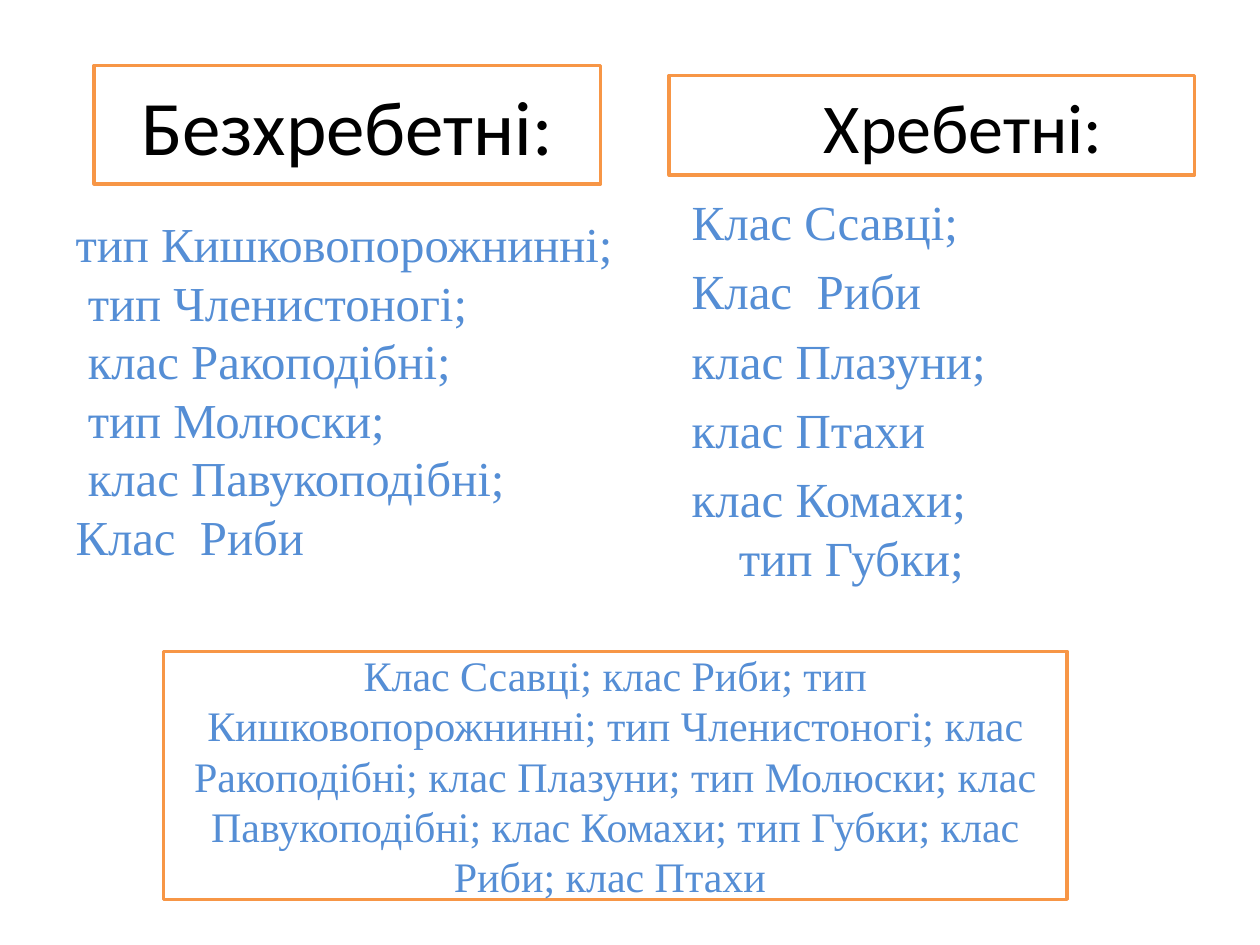
from lxml.etree import SubElement
from pptx import Presentation
from pptx.dml.color import RGBColor
from pptx.enum.shapes import MSO_SHAPE as Shape
from pptx.enum.text import MSO_ANCHOR as Anchor, MSO_AUTO_SIZE as Fit, PP_ALIGN as Align
from pptx.oxml.ns import qn
from pptx.util import Cm, Pt

BLUE = RGBColor(0x55, 0x8E, 0xD5)
ORANGE = RGBColor(0xF7, 0x96, 0x46)
BLACK = RGBColor(0, 0, 0)
WHITE = RGBColor(255, 255, 255)
SERIF, SANS = "Times New Roman", "Calibri"

LEFT = ["тип Кишковопорожнинні;", " тип Членистоногі;", " клас Ракоподібні;",
        " тип Молюски;", " клас Павукоподібні;", "Клас  Риби"]
RIGHT = ["Клас Ссавці;", "Клас  Риби", "клас Плазуни;", "клас Птахи",
         "клас Комахи;", "тип Губки;"]
BANK = ("Клас Ссавці; клас Риби; тип Кишковопорожнинні; тип Членистоногі; "
        "клас Ракоподібні; клас Плазуни; тип Молюски; клас Павукоподібні; "
        "клас Комахи; тип Губки; клас Риби; клас Птахи ")

BOXES = [
    (BANK, (3.3, 13.13, 18.21, 5), SERIF, 24, BLUE, Align.CENTER, 0.25),
    ("Безхребетні:", (1.9, 1.32, 10.21, 2.39), SANS, 44, BLACK, Align.CENTER, 0.25),
    ("Хребетні:", (13.49, 1.52, 10.59, 2.01), SANS, 40, BLACK, Align.LEFT, 3.12),
]


def style(para, font, size, color, align):
    para.alignment = align
    for run in para.runs:
        run.font.name = font
        run.font.size = Pt(size)
        run.font.color.rgb = color


def place(shape, at):
    shape.left, shape.top, shape.width, shape.height = map(Cm, at)


def fill_list(shape, lines, at, size):
    place(shape, at)
    frame = shape.text_frame
    frame.text = "\n".join(lines)
    frame.word_wrap = True
    frame.auto_size = Fit.NONE
    for para in frame.paragraphs:
        style(para, SERIF, size, BLUE, Align.LEFT)
    return frame


def add_box(slide, text, at, font, size, color, align, inset):
    box = slide.shapes.add_shape(Shape.RECTANGLE, *map(Cm, at))
    box.shadow.inherit = False
    box.fill.solid()
    box.fill.fore_color.rgb = WHITE
    box.line.color.rgb = ORANGE
    box.line.width = Pt(2)
    frame = box.text_frame
    frame.text = text
    frame.word_wrap = True
    frame.vertical_anchor = Anchor.MIDDLE
    frame.margin_left = Cm(inset)
    style(frame.paragraphs[0], font, size, color, align)


def main():
    deck = Presentation()
    deck.slide_width, deck.slide_height = Cm(25.4), Cm(19.05)
    slide = deck.slides.add_slide(deck.slide_layouts[1])
    title, body = slide.placeholders

    frame = fill_list(title, LEFT, (1.27, 3.94, 11.84, 9.4), 27.9)
    frame.vertical_anchor = Anchor.MIDDLE
    frame.margin_bottom = Cm(1.7)

    frame = fill_list(body, RIGHT, (13.69, 0.91, 10.44, 15.39), 28)
    frame.margin_top = Cm(2.95)
    last = len(RIGHT) - 1
    for i, para in enumerate(frame.paragraphs):
        para.space_before = Pt(0 if i == last else 6)
        props = para._p.get_or_add_pPr()
        props.set("marL", str(Cm(0.95)))
        props.set("indent", str(Cm(0 if i == last else -0.95)))
        SubElement(props, qn("a:buNone"))

    for box in BOXES:
        add_box(slide, *box)
    deck.save("out.pptx")


if __name__ == "__main__":
    main()
